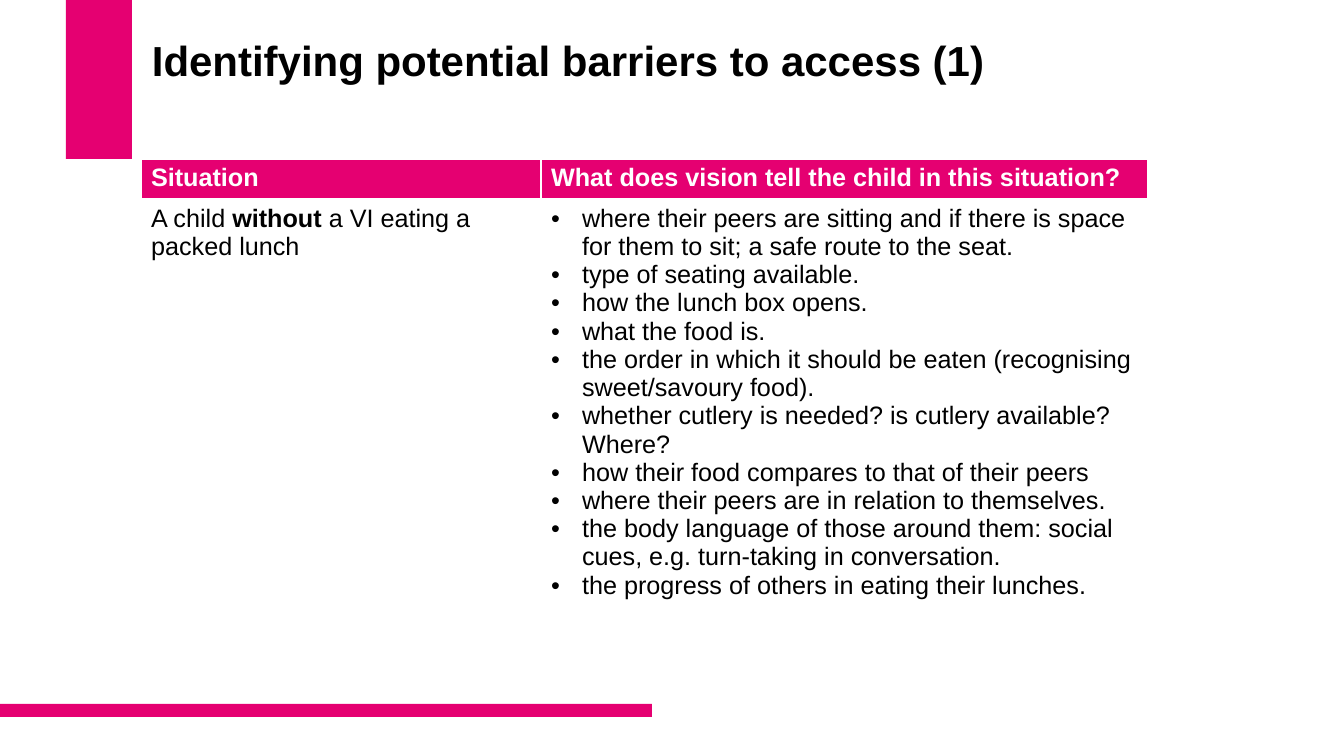
import pptx
import pptx.util
import pptx.dml.color
import pptx.enum.shapes
import pptx.enum.text
import pptx.oxml.ns
from lxml import etree

SLIDE_WIDTH, SLIDE_HEIGHT = 1344, 756
EMU_PER_PX = 12192000 / SLIDE_WIDTH
FONT = "Arial"
PINK, WHITE, BLACK = "E50071", "FFFFFF", "000000"
BODY_SIZE = 18
BULLET_INDENT = 31

HEADINGS = ["Situation", "What does vision tell the child in this situation?"]
SITUATION = [("A child ", False), ("without ", True), ("a VI eating a packed lunch", False)]
VISION_CUES = [
    "where their peers are sitting and if there is space for them to sit; a safe route to the seat.",
    "type of seating available.",
    "how the lunch box opens.",
    "what the food is.",
    "the order in which it should be eaten (recognising sweet/savoury food).",
    "whether cutlery is needed? is cutlery available? Where?",
    "how their food compares to that of their peers",
    "where their peers are in relation to themselves.",
    "the body language of those around them: social cues, e.g. turn-taking in conversation.",
    "the progress of others in eating their lunches.",
]


def px(length):
    return pptx.util.Emu(round(length * EMU_PER_PX))


def color(value):
    return pptx.dml.color.RGBColor.from_string(value)


def style(font, size, value, bold=False):
    font.name = FONT
    font.size = pptx.util.Pt(size)
    font.bold = bold
    font.color.rgb = color(value)


def add_bar(page, left, top, width, height):
    bar = page.shapes.add_shape(pptx.enum.shapes.MSO_SHAPE.RECTANGLE,
                                px(left), px(top), px(width), px(height))
    bar.shadow.inherit = False
    bar.fill.solid()
    bar.fill.fore_color.rgb = color(PINK)
    bar.line.fill.background()


def add_title(page, text):
    box = page.shapes.add_textbox(px(142), px(16), px(977), px(148))
    frame = box.text_frame
    frame.word_wrap = True
    frame.vertical_anchor = pptx.enum.text.MSO_ANCHOR.MIDDLE
    frame.margin_top, frame.margin_bottom = px(5), px(59)
    frame.text = text
    para = frame.paragraphs[0]
    para.line_spacing = 0.9
    style(para.runs[0].font, 30, BLACK, True)


def paint_cell(cell, fill, bottom_width=1):
    """Give a cell white borders and a solid fill."""
    properties = cell._tc.get_or_add_tcPr()
    for side, width in (("L", 1), ("R", 1), ("T", 1), ("B", bottom_width)):
        line = etree.SubElement(properties, pptx.oxml.ns.qn(f"a:ln{side}"),
                                w=str(pptx.util.Pt(width)))
        paint = etree.SubElement(line, pptx.oxml.ns.qn("a:solidFill"))
        etree.SubElement(paint, pptx.oxml.ns.qn("a:srgbClr"), val=WHITE)
    cell.fill.solid()
    cell.fill.fore_color.rgb = color(fill)


def add_bullet(para):
    properties = para._p.get_or_add_pPr()
    properties.set("marL", str(px(BULLET_INDENT)))
    properties.set("indent", str(-px(BULLET_INDENT)))
    etree.SubElement(properties, pptx.oxml.ns.qn("a:buFont"), typeface=FONT)
    etree.SubElement(properties, pptx.oxml.ns.qn("a:buChar"), char="•")


def fill_bullets(cell, lines):
    cell.text_frame.text = "\n".join(lines)
    for para in cell.text_frame.paragraphs:
        add_bullet(para)
        style(para.runs[0].font, BODY_SIZE, BLACK)


def add_situation_table(page):
    widths, heights = [400, 607], [37, 490]
    frame = page.shapes.add_table(2, 2, px(141), px(159), px(sum(widths)), px(sum(heights)))
    table = frame.table
    table.horz_banding = False
    for column, width in zip(table.columns, widths):
        column.width = px(width)
    for row, height in zip(table.rows, heights):
        row.height = px(height)

    # Header row
    for index, heading in enumerate(HEADINGS):
        cell = table.cell(0, index)
        paint_cell(cell, PINK, bottom_width=3)
        cell.text_frame.text = heading
        style(cell.text_frame.paragraphs[0].runs[0].font, BODY_SIZE, WHITE, True)

    # Body row
    situation, cues = table.cell(1, 0), table.cell(1, 1)
    for cell in (situation, cues):
        paint_cell(cell, WHITE)
    para = situation.text_frame.paragraphs[0]
    for text, bold in SITUATION:
        span = para.add_run()
        span.text = text
        style(span.font, BODY_SIZE, BLACK, bold)
    fill_bullets(cues, VISION_CUES)


def main():
    deck = pptx.Presentation()
    deck.slide_width, deck.slide_height = px(SLIDE_WIDTH), px(SLIDE_HEIGHT)
    page = deck.slides.add_slide(deck.slide_layouts[6])

    # Accent bars
    add_bar(page, 66, 0, 66, 159)
    add_bar(page, 0, 704, 652, 13)

    # Content
    add_title(page, "Identifying potential barriers to access (1)")
    add_situation_table(page)
    deck.save("out.pptx")


if __name__ == "__main__":
    main()
